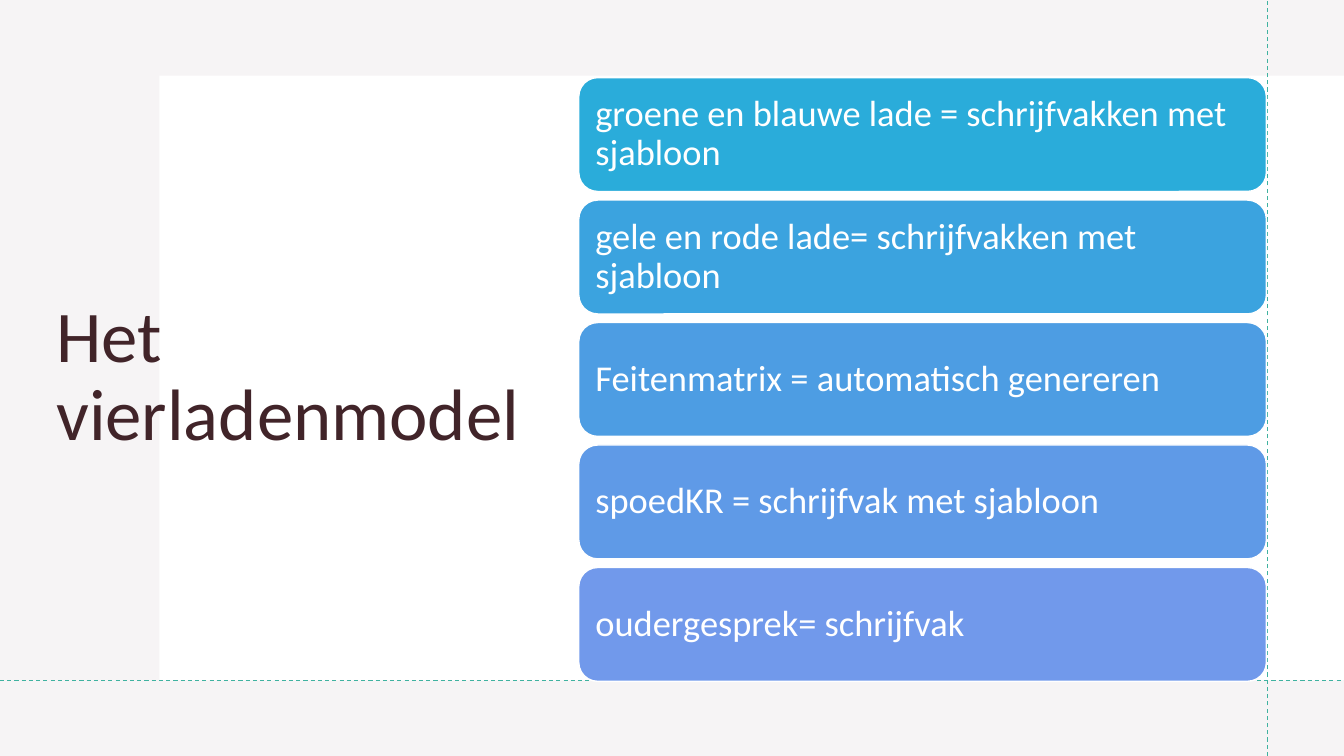
import pptx
import pptx.util
import pptx.dml.color
import pptx.enum.dml
import pptx.enum.shapes
import pptx.enum.text
import pptx.oxml.ns
from lxml import etree

WIDTH, HEIGHT = 13.33, 7.5
COLORS = {"white": "FFFFFF", "wash": "E8E2E3", "title": "412429", "guide": "3FB2A0"}
CARDS = [
    ("groene en blauwe lade = schrijfvakken met sjabloon", "2AACDA"),
    ("gele en rode lade= schrijfvakken met sjabloon", "3BA3DF"),
    ("Feitenmatrix = automatisch genereren", "4D9DE3"),
    ("spoedKR = schrijfvak met sjabloon", "5F9AE7"),
    ("oudergesprek= schrijfvak", "7199EB"),
]
CARD_LEFT, CARD_TOP, CARD_WIDTH, CARD_HEIGHT = 5.74, 0.77, 6.82, 1.13
CARD_PITCH = 1.215


def inches(*lengths):
    return [pptx.util.Inches(length) for length in lengths]


def rgb(color):
    return pptx.dml.color.RGBColor.from_string(color)


def add_block(slide, kind, box, color):
    block = slide.shapes.add_shape(kind, *inches(*box))
    block.shadow.inherit = False
    block.fill.solid()
    block.fill.fore_color.rgb = rgb(color)
    block.line.fill.background()
    return block


def add_panel(slide, box, color, opacity=100):
    panel = add_block(slide, pptx.enum.shapes.MSO_SHAPE.RECTANGLE, box, color)
    if opacity < 100:
        tint = panel.fill._xPr.find(".//" + pptx.oxml.ns.qn("a:srgbClr"))
        etree.SubElement(tint, pptx.oxml.ns.qn("a:alpha"), val=str(opacity * 1000))


def write(frame, text, size, color):
    frame.word_wrap = True
    frame.vertical_anchor = pptx.enum.text.MSO_ANCHOR.MIDDLE
    paragraph = frame.paragraphs[0]
    paragraph.text = text
    paragraph.alignment = pptx.enum.text.PP_ALIGN.LEFT
    paragraph.line_spacing = 0.9
    paragraph.font.name = "Calibri"
    paragraph.font.size = pptx.util.Pt(size)
    paragraph.font.color.rgb = rgb(color)


def add_title(slide, text, box):
    title = slide.shapes.add_textbox(*inches(*box))
    write(title.text_frame, text, 52, COLORS["title"])


def add_guide(slide, start, end):
    guide = slide.shapes.add_connector(
        pptx.enum.shapes.MSO_CONNECTOR.STRAIGHT, *inches(*start, *end))
    guide.line.color.rgb = rgb(COLORS["guide"])
    guide.line.width = pptx.util.Pt(0.75)
    guide.line.dash_style = pptx.enum.dml.MSO_LINE.DASH
    etree.SubElement(guide._element.spPr, pptx.oxml.ns.qn("a:effectLst"))


def add_card(slide, row, text, color):
    box = CARD_LEFT, CARD_TOP + row * CARD_PITCH, CARD_WIDTH, CARD_HEIGHT
    card = add_block(slide, pptx.enum.shapes.MSO_SHAPE.ROUNDED_RECTANGLE, box, color)
    card.line.color.rgb = rgb(COLORS["white"])
    card.line.width = pptx.util.Pt(1)
    frame = card.text_frame
    inset = pptx.util.Inches(0.11)
    frame.margin_left = frame.margin_right = inset
    frame.margin_top = frame.margin_bottom = inset
    write(frame, text, 26, COLORS["white"])


def main():
    deck = pptx.Presentation()
    deck.slide_width, deck.slide_height = inches(WIDTH, HEIGHT)
    slide = deck.slides.add_slide(deck.slide_layouts[6])

    margin = HEIGHT / 10
    add_panel(slide, (0, 0, WIDTH, HEIGHT), COLORS["white"])
    add_panel(slide, (0, 0, WIDTH, HEIGHT), COLORS["wash"], 35)
    add_panel(slide, (1.58, margin, WIDTH - 1.58, HEIGHT - 2 * margin), COLORS["white"])
    add_title(slide, "Het vierladenmodel", (0.46, 1.03, 4.89, 5.44))
    add_guide(slide, (12.57, HEIGHT), (12.57, 0))
    add_guide(slide, (0, HEIGHT - margin), (WIDTH, HEIGHT - margin))
    for row, (text, color) in enumerate(CARDS):
        add_card(slide, row, text, color)

    deck.save("out.pptx")


if __name__ == "__main__":
    main()
